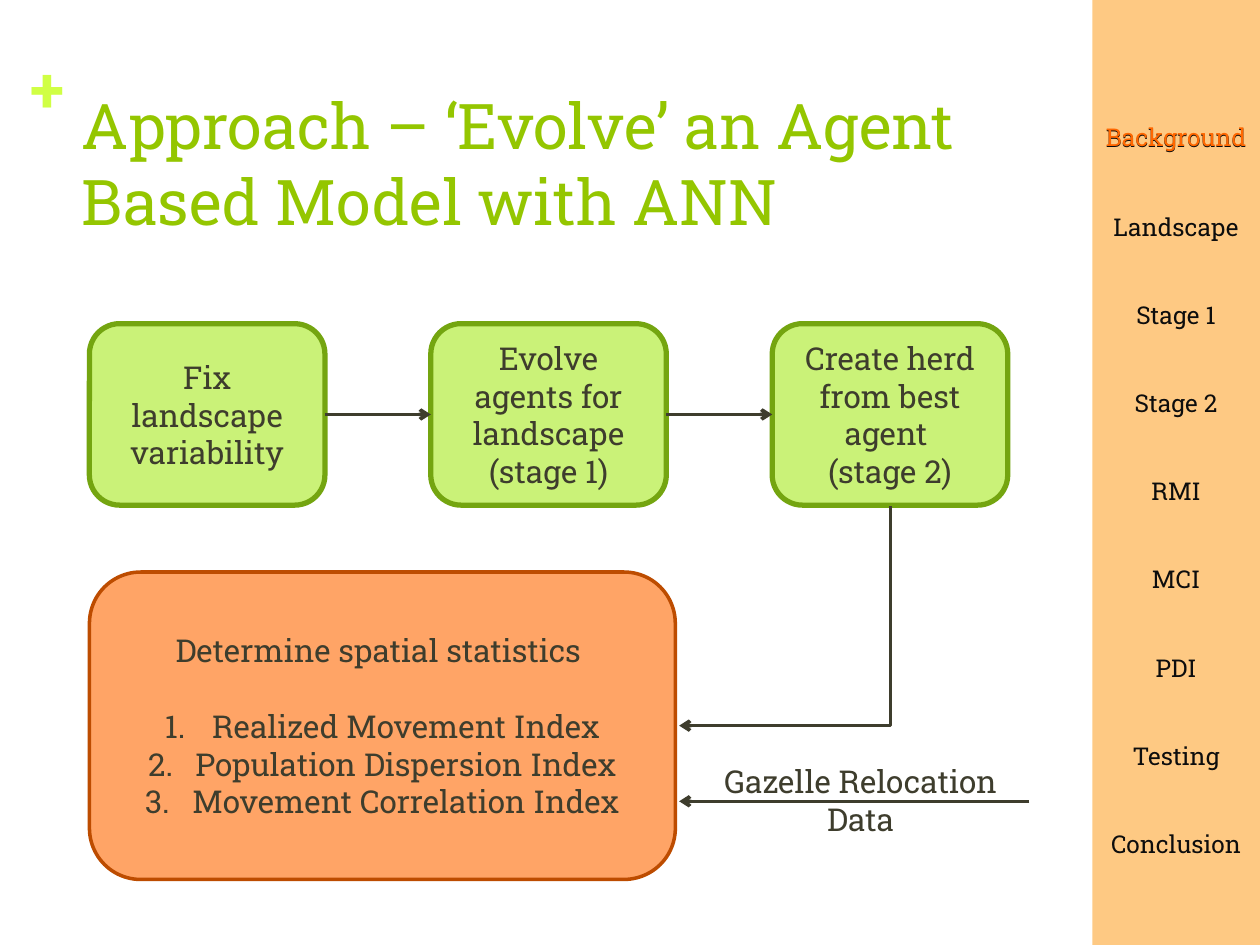
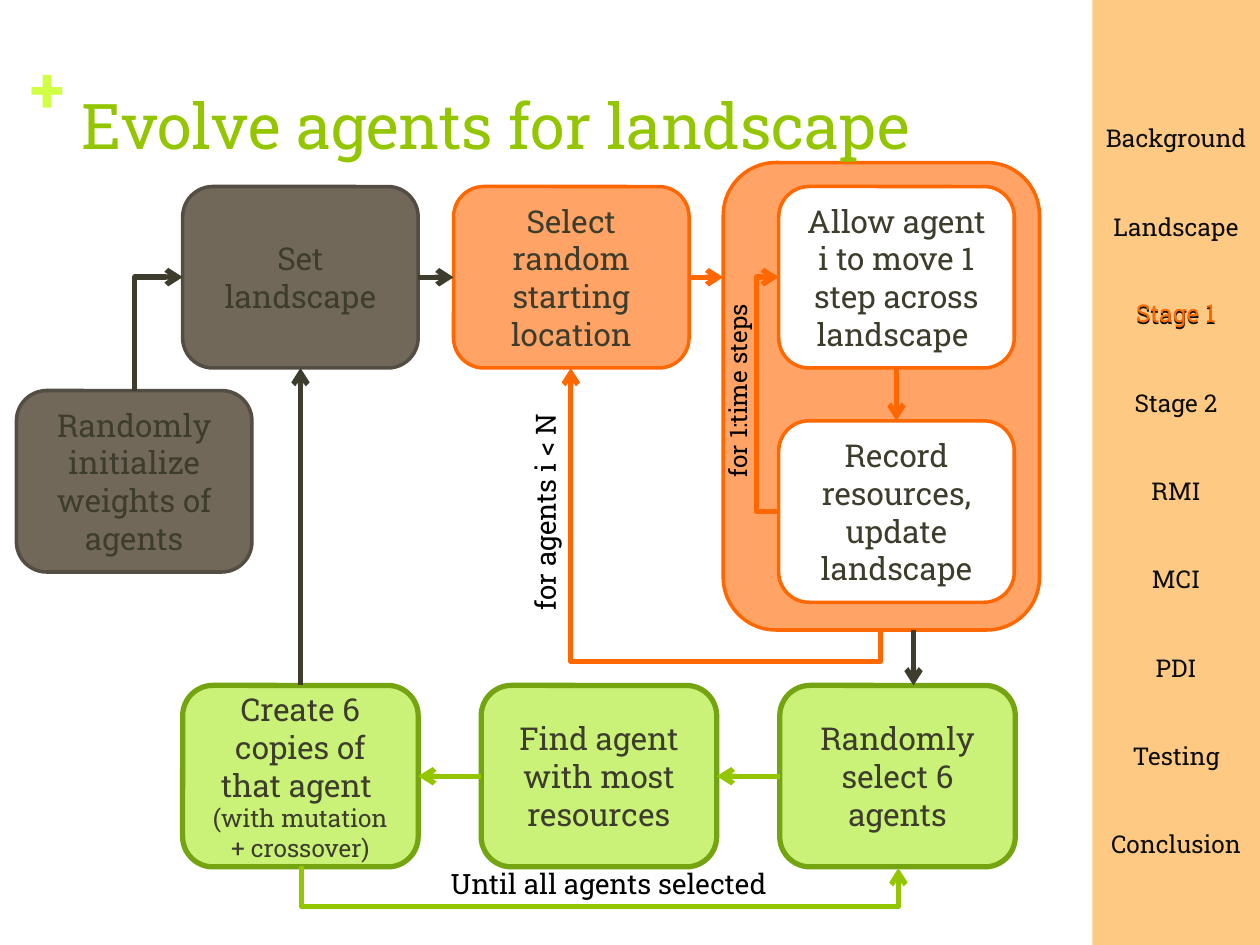
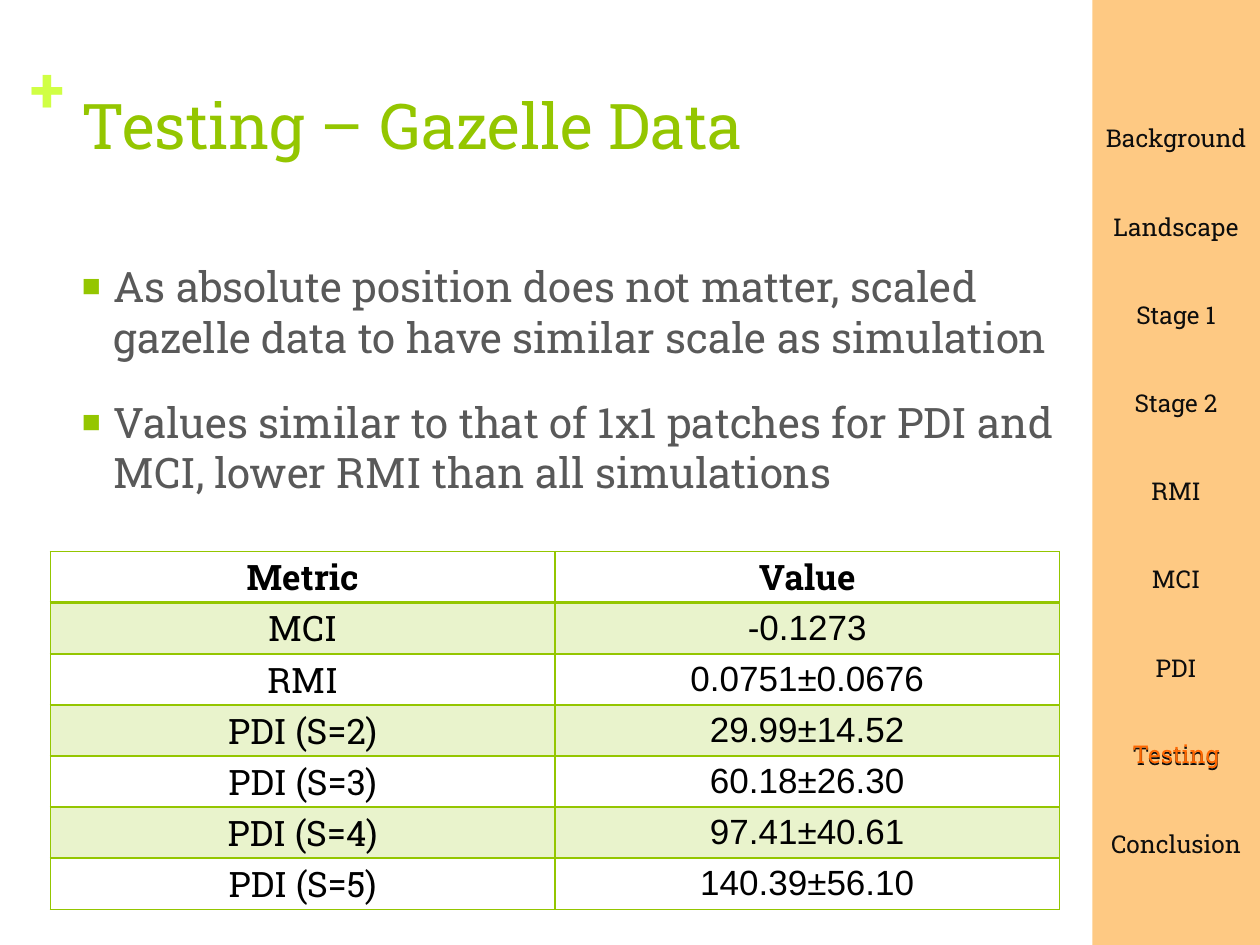
from lxml.etree import SubElement
from pptx import Presentation
from pptx.dml.color import RGBColor
from pptx.enum.shapes import MSO_CONNECTOR, MSO_SHAPE
from pptx.enum.text import MSO_ANCHOR, MSO_AUTO_SIZE, PP_ALIGN
from pptx.oxml.ns import qn
from pptx.util import Pt

STRAIGHT, ELBOW = MSO_CONNECTOR.STRAIGHT, MSO_CONNECTOR.ELBOW
RECTANGLE, ROUNDED = MSO_SHAPE.RECTANGLE, MSO_SHAPE.ROUNDED_RECTANGLE
LEFT_ALIGN, CENTER = PP_ALIGN.LEFT, PP_ALIGN.CENTER
TOP_ANCHOR, MIDDLE = MSO_ANCHOR.TOP, MSO_ANCHOR.MIDDLE
NO_FIT = MSO_AUTO_SIZE.NONE
TOP, LEFT, BOTTOM, RIGHT = range(4)  # connection sites of a rectangle
TITLE_AND_CONTENT, TITLE_ONLY = 1, 5  # layouts of the template

BLACK = RGBColor(0x00, 0x00, 0x00)
NEAR_BLACK = RGBColor(0x0D, 0x0D, 0x0D)
WHITE = RGBColor(0xFF, 0xFF, 0xFF)
INK = RGBColor(0x3E, 0x3D, 0x2D)
GRAY = RGBColor(0x59, 0x59, 0x59)
GREEN = RGBColor(0x94, 0xC6, 0x00)
LIME = RGBColor(0xD0, 0xFF, 0x44)
AMBER = RGBColor(0xFE, 0xA0, 0x22)
ORANGE = RGBColor(0xFF, 0x67, 0x00)
PALE_GREEN = RGBColor(0xCA, 0xF2, 0x78)
DARK_GREEN = RGBColor(0x74, 0xA5, 0x10)
PEACH = RGBColor(0xFF, 0xA4, 0x66)
RUST = RGBColor(0xBD, 0x4C, 0x00)
BROWN = RGBColor(0x71, 0x68, 0x5A)
DARK_BROWN = RGBColor(0x54, 0x4D, 0x43)

# fill, line colour, line width
GREEN_BOX = (PALE_GREEN, DARK_GREEN, 3)
BROWN_BOX = (BROWN, DARK_BROWN, 2)
PEACH_BOX = (PEACH, ORANGE, 2)
WHITE_BOX = (WHITE, ORANGE, 2)
STATISTICS_BOX = (PEACH, RUST, 2)

SECTIONS = ["Background", "Landscape", "Stage 1", "Stage 2", "RMI",
            "MCI", "PDI", "Testing", "Conclusion"]
SECTION_PITCH = 50.4
BAND_LEFT, BAND_WIDTH = 624.2, 95.8
STEP_SIZE = (134.6, 103.7)


def lengths(*values):
    return [Pt(value) for value in values]


def set_opacity(properties, percent):
    color = properties.find(qn("a:solidFill")).find(qn("a:srgbClr"))
    SubElement(color, qn("a:alpha"), val=str(percent * 1000))


def indent(para, distance):
    """Give the paragraph a hanging indent and return its properties."""
    properties = para._p.get_or_add_pPr()
    properties.set("marL", str(Pt(distance)))
    properties.set("indent", str(-Pt(distance)))
    return properties


class Deck:
    font = "Roboto Slab"

    def __init__(self):
        self.presentation = Presentation()
        self.presentation.slide_width = Pt(720)
        self.presentation.slide_height = Pt(540)
        self.slide = None

    def start_slide(self, section, layout=TITLE_ONLY):
        """Add a slide with the plus sign, the band and its section list."""
        layouts = self.presentation.slide_layouts
        self.slide = self.presentation.slides.add_slide(layouts[layout])
        plus = self.label("+", (17.3, 28.1, 20.9, 43.9), 36, LIME, bold=True)
        frame = plus.text_frame
        frame.margin_left = frame.margin_right = 0
        frame.margin_top = frame.margin_bottom = 0
        frame.paragraphs[0].alignment = LEFT_ALIGN

        band = self.shape(RECTANGLE, (BAND_LEFT, 0, BAND_WIDTH, 540), AMBER)
        set_opacity(band.element.spPr, 56)
        names = self.text_box((BAND_LEFT, 67, BAND_WIDTH, 431.3))
        for number, name in enumerate(SECTIONS):
            para = self.para(names, number, name, 14, NEAR_BLACK)
            para.space_after = Pt(33.6)
        top = 66.2 + SECTION_PITCH * SECTIONS.index(section)
        self.label(section, (620.9, top, 102.2, 24.5), 14, ORANGE)

    def run(self, para, text, size, color, bold=False, font=None):
        span = para.add_run()
        span.text = text
        span.font.name = font or self.font
        span.font.size = Pt(size)
        span.font.bold = bold
        span.font.color.rgb = color

    def para(self, frame, number, text, size, color, align=CENTER):
        para = frame.add_paragraph() if number else frame.paragraphs[0]
        para.alignment = align
        self.run(para, text, size, color)
        return para

    def text_box(self, place):
        frame = self.slide.shapes.add_textbox(*lengths(*place)).text_frame
        frame.word_wrap = True
        return frame

    def label(self, text, place, size, color, bold=False, rotation=0):
        box = self.slide.shapes.add_textbox(*lengths(*place))
        box.rotation = rotation
        box.text_frame.word_wrap = True
        para = box.text_frame.paragraphs[0]
        para.alignment = CENTER
        self.run(para, text, size, color, bold)
        return box

    def placeholder(self, holder, place):
        """Move a placeholder and return its text frame."""
        holder.left, holder.top, holder.width, holder.height = lengths(*place)
        frame = holder.text_frame
        frame.word_wrap = True
        frame.auto_size = NO_FIT
        frame.vertical_anchor = TOP_ANCHOR
        return frame

    def title(self, text):
        """Fill the title and bring it in front of what is drawn so far."""
        holder = self.slide.shapes.title
        holder.element.getparent().append(holder.element)
        frame = self.placeholder(holder, (39.6, 46.1, 576.7, 87.8))
        self.para(frame, 0, text, 36, GREEN, LEFT_ALIGN)

    def bullets(self, texts, place):
        frame = self.placeholder(self.slide.placeholders[1], place)
        for number, text in enumerate(texts):
            para = self.para(frame, number, text, 24, GRAY, LEFT_ALIGN)
            para.space_before = Pt(20)
            properties = indent(para, 18)
            color = SubElement(properties, qn("a:buClr"))
            SubElement(color, qn("a:srgbClr"), val=str(GREEN))
            SubElement(properties, qn("a:buSzPct"), val="75000")
            SubElement(properties, qn("a:buChar"), char="■")

    def shape(self, kind, place, fill):
        shape = self.slide.shapes.add_shape(kind, *lengths(*place))
        shape.shadow.inherit = False
        shape.fill.solid()
        shape.fill.fore_color.rgb = fill
        shape.line.fill.background()
        return shape

    def box(self, place, style, *texts, last_size=18):
        """Add a rounded box with one paragraph for each text."""
        fill, line_color, line_width = style
        box = self.shape(ROUNDED, place, fill)
        box.line.color.rgb = line_color
        box.line.width = Pt(line_width)
        box.text_frame.vertical_anchor = MIDDLE
        for number, text in enumerate(texts):
            is_last = number == len(texts) - 1
            size = last_size if is_last else 18
            self.para(box.text_frame, number, text, size, INK)
        return box

    def step(self, left, top, style, *texts, last_size=18):
        return self.box((left, top, *STEP_SIZE), style, *texts,
                        last_size=last_size)

    def connector(self, kind, start, end, color, width):
        ends = lengths(*start, *end)
        connector = self.slide.shapes.add_connector(kind, *ends)
        connector.line.color.rgb = color
        connector.line.width = Pt(width)
        line = connector.line._get_or_add_ln()
        SubElement(line, qn("a:tailEnd"), type="arrow")
        SubElement(connector.element.spPr, qn("a:effectLst"))
        return connector

    def arrow(self, start, end, color=INK, width=3):
        return self.connector(STRAIGHT, start, end, color, width)

    def link(self, source, source_side, target, target_side,
             color=INK, width=3):
        connector = self.arrow((0, 0), (0, 0), color, width)
        connector.begin_connect(source, source_side)
        connector.end_connect(target, target_side)

    def elbow(self, start, end, bend=None, vertical=True, color=INK, width=3):
        """Draw a bent arrow; bend is the signed length of its first leg,
        or None for a single corner."""
        run_x, run_y = end[0] - start[0], end[1] - start[1]
        first_run = run_x
        if vertical:
            # The preset starts sideways, so lay it out a quarter turn back.
            first_run = run_y
            center_x = (start[0] + end[0]) / 2
            center_y = (start[1] + end[1]) / 2
            start = (center_x - run_y / 2, center_y + run_x / 2)
            end = (center_x + run_y / 2, center_y - run_x / 2)
        connector = self.connector(ELBOW, start, end, color, width)
        properties = connector.element.spPr
        if vertical:
            properties.find(qn("a:xfrm")).set("rot", "5400000")
        geometry = properties.find(qn("a:prstGeom"))
        if bend is None:
            geometry.set("prst", "bentConnector2")
        else:
            ratio = round(bend / first_run * 100000)
            SubElement(geometry.find(qn("a:avLst")), qn("a:gd"),
                       name="adj1", fmla=f"val {ratio}")

    def table(self, rows, place):
        frame = self.slide.shapes.add_table(
            len(rows), len(rows[0]), *lengths(*place))
        table = frame.table
        table.first_row = table.horz_banding = False
        for row, texts in enumerate(rows):
            for column, text in enumerate(texts):
                self.cell(table.cell(row, column), row, column, text)

    def cell(self, cell, row, column, text):
        cell.vertical_anchor = MIDDLE
        cell.margin_left = cell.margin_right = Pt(5)
        cell.margin_top = cell.margin_bottom = 0
        para = cell.text_frame.paragraphs[0]
        para.alignment = CENTER
        font = "Arial" if row and column else self.font
        self.run(para, text, 20, BLACK, row == 0, font)

        properties = cell._tc.get_or_add_tcPr()
        widths = {"lnL": 1, "lnR": 1, "lnT": 2 if row == 1 else 1,
                  "lnB": 2 if row == 0 else 1}
        for side, width in widths.items():
            border = SubElement(properties, qn(f"a:{side}"), w=str(Pt(width)))
            fill = SubElement(border, qn("a:solidFill"))
            SubElement(fill, qn("a:srgbClr"), val=str(GREEN))
        if row % 2:
            cell.fill.solid()
            cell.fill.fore_color.rgb = GREEN
            set_opacity(properties, 20)
        else:
            cell.fill.background()


def approach_slide(deck):
    deck.start_slide("Background")
    deck.title("Approach – ‘Evolve’ an Agent Based Model with ANN")
    step_texts = [["Fix landscape variability"],
                  ["Evolve agents for landscape (stage 1)"],
                  ["Create herd from best agent ", "(stage 2)"]]
    steps = [deck.step(51.1 + 195.1 * number, 185, GREEN_BOX, *texts)
             for number, texts in enumerate(step_texts)]
    statistics = deck.box(
        (51.1, 326.9, 334.8, 175.7), STATISTICS_BOX,
        "Determine spatial statistics ", "Realized Movement Index",
        "Population Dispersion Index", "Movement Correlation Index")
    indexes = statistics.text_frame.paragraphs[1:]
    indexes[0].space_before = Pt(21.6)
    for para in indexes:
        SubElement(indent(para, 27), qn("a:buAutoNum"), type="arabicPeriod")

    for source, target in zip(steps, steps[1:]):
        deck.link(source, RIGHT, target, LEFT, width=2)
    deck.elbow((509, 289.4), (388.1, 414.7), width=2)
    deck.arrow((588.2, 457.9), (388.1, 457.9), width=2)
    deck.label("Gazelle Relocation Data", (394.6, 432, 194.4, 51.1), 18, INK)


def evolve_slide(deck):
    upper, lower, first_left = 106.6, 391.7, 104.4
    deck.start_slide("Stage 1")
    deck.box((413.3, 92.9, 180.7, 267.1), PEACH_BOX)
    deck.title("Evolve agents for landscape")

    landscape = deck.step(first_left, upper, BROWN_BOX, "Set landscape")
    location = deck.step(259.2, upper, PEACH_BOX,
                         "Select random starting location")
    move = deck.step(445, upper, WHITE_BOX,
                     "Allow agent i to move 1 step across landscape ")
    record = deck.step(445, 240.5, WHITE_BOX,
                       "Record resources, update landscape")
    copies, best, chosen = [
        deck.step(first_left + 170.6 * number, lower, GREEN_BOX, *texts,
                  last_size=size)
        for number, (size, texts) in enumerate([
            (14, ["Create 6 copies of that agent ",
                  "(with mutation + crossover)"]),
            (18, ["Find agent with most resources"]),
            (18, ["Randomly select 6 agents"])])]
    deck.step(9.4, 223.2, BROWN_BOX, "Randomly initialize weights of agents")

    deck.link(landscape, RIGHT, location, LEFT)
    deck.link(move, BOTTOM, record, TOP, ORANGE)
    deck.link(chosen, LEFT, best, RIGHT, GREEN)
    deck.link(best, LEFT, copies, RIGHT, GREEN)
    deck.link(copies, TOP, landscape, BOTTOM)
    into_loop = deck.arrow((393.8, 158.4), (413.3, 158.4), ORANGE)
    into_loop.begin_connect(location, RIGHT)
    deck.arrow((522, 360), (522, lower))

    deck.elbow((77, 223.2), (first_left, 158.4))
    deck.elbow((446, 292.3), (445, 158.4), -14, vertical=False, color=ORANGE)
    deck.elbow((503.3, 360), (326.2, 210.3), 18, color=ORANGE)
    deck.elbow((172.4, 495), (513.4, 496), 23, color=GREEN)

    deck.label("for agents i < N", (237.6, 279.4, 147.6, 26.6), 16, BLACK,
               rotation=270)
    deck.label("for 1:time steps", (355, 211, 133.2, 24.5), 14, BLACK,
               rotation=270)
    deck.label("Until all agents selected", (236.2, 491.8, 223.2, 26.6), 16,
               BLACK)


def testing_slide(deck):
    deck.start_slide("Testing", TITLE_AND_CONTENT)
    deck.title("Testing – Gazelle Data")
    deck.table([("Metric", "Value"),
                ("MCI", "-0.1273"),
                ("RMI", "0.0751±0.0676"),
                ("PDI (S=2)", "29.99±14.52"),
                ("PDI (S=3)", "60.18±26.30"),
                ("PDI (S=4)", "97.41±40.61"),
                ("PDI (S=5)", "140.39±56.10")],
               (28.8, 315.2, 576.7, 204.5))
    deck.bullets(["As absolute position does not matter, scaled gazelle data "
                  "to have similar scale as simulation",
                  "Values similar to that of 1x1 patches for PDI and MCI, "
                  "lower RMI than all simulations"],
                 (39.6, 145.4, 576.7, 380.9))


def main():
    deck = Deck()
    approach_slide(deck)
    evolve_slide(deck)
    testing_slide(deck)
    deck.presentation.save("out.pptx")


if __name__ == "__main__":
    main()
